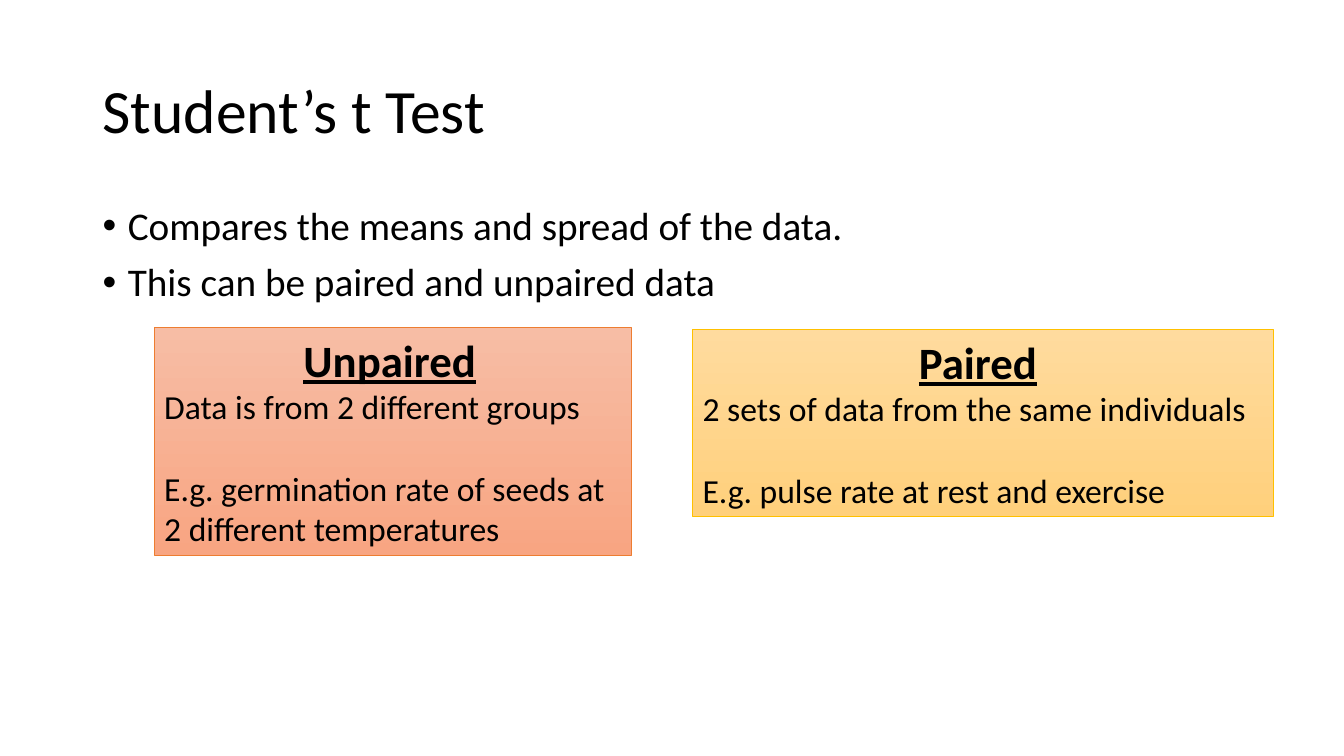
from dataclasses import dataclass

from lxml.etree import SubElement
from pptx import Presentation
from pptx.dml.color import RGBColor as RGB
from pptx.enum.shapes import MSO_SHAPE as Shape
from pptx.enum.text import MSO_ANCHOR as Anchor, PP_ALIGN as Align
from pptx.oxml.ns import qn
from pptx.util import Inches, Pt


@dataclass(frozen=True)
class Theme:
    font: str = "Calibri"
    ink: RGB = RGB(0, 0, 0)
    title: int = 44
    bullet: int = 28
    heading: int = 32
    detail: int = 24
    orange: tuple = ("F7BDA5", "F8A582", "ED7D31")  # top, bottom, outline
    gold: tuple = ("FFDB9E", "FFD07C", "FFC000")


THEME = Theme()


def set_font(font, size, emphasis=False):
    font.name, font.size = THEME.font, Pt(size)
    font.color.rgb = THEME.ink
    font.bold = font.underline = emphasis


def add_text_frame(slide, box, anchor=Anchor.TOP):
    frame = slide.shapes.add_textbox(*map(Inches, box)).text_frame
    frame.word_wrap = True
    frame.vertical_anchor = anchor
    return frame


def add_title(slide, box, title):
    line = add_text_frame(slide, box, Anchor.MIDDLE).paragraphs[0]
    line.text = title
    line.line_spacing = 0.9
    set_font(line.font, THEME.title)


def add_bullets(slide, box, points):
    frame = add_text_frame(slide, box)
    frame.text = "\n".join(points)
    for point in frame.paragraphs:
        point.line_spacing = 0.9
        point.space_before = Pt(10)
        set_font(point.font, THEME.bullet)
        # Hanging bullet
        props = point._p.get_or_add_pPr()
        props.set("marL", str(Inches(0.25)))
        props.set("indent", str(-Inches(0.25)))
        SubElement(props, qn("a:buFont"), typeface="Arial")
        SubElement(props, qn("a:buChar"), char="•")


def add_card(slide, box, colors, heading, space_size, definition, example):
    card = slide.shapes.add_shape(Shape.RECTANGLE, *map(Inches, box))
    card.shadow.inherit = False
    top, bottom, outline = map(RGB.from_string, colors)

    # Vertical gradient and thin outline
    card.fill.gradient()
    card.fill.gradient_angle = 270
    for stop, color in zip(card.fill.gradient_stops, (top, bottom)):
        stop.color.rgb = color
    card.line.color.rgb = outline
    card.line.width = Pt(0.5)

    # Heading, whose trailing space is not underlined
    frame = card.text_frame
    frame.word_wrap = True
    frame.vertical_anchor = Anchor.TOP
    heading_line = frame.paragraphs[0]
    heading_line.alignment = Align.CENTER
    for text, size, emphasis in ((heading, THEME.heading, True), (" ", space_size, False)):
        run = heading_line.add_run()
        run.text = text
        set_font(run.font, size, emphasis)

    # Definition, then the example one line lower
    for text, gap in ((definition, 0), (example, 1.22 * THEME.detail)):
        detail = frame.add_paragraph()
        detail.text = text
        detail.alignment = Align.LEFT
        detail.space_before = Pt(gap)
        set_font(detail.font, THEME.detail)


def main():
    deck = Presentation()
    deck.slide_width, deck.slide_height = Inches(13.33), Inches(7.5)
    slide = deck.slides.add_slide(deck.slide_layouts[6])

    add_title(slide, (0.92, 0.4, 11.5, 1.45), "Student’s t Test")
    add_bullets(slide, (0.92, 2, 11.5, 1.26), (
        "Compares the means and spread of the data.",
        "This can be paired and unpaired data",
    ))
    add_card(slide, (1.53, 3.25, 4.73, 2.26), THEME.orange, "Unpaired", 18,
             "Data is from 2 different groups",
             "E.g. germination rate of seeds at 2 different temperatures")
    add_card(slide, (6.87, 3.27, 5.76, 1.85), THEME.gold, "Paired", THEME.heading,
             "2 sets of data from the same individuals",
             "E.g. pulse rate at rest and exercise")

    deck.save("out.pptx")


if __name__ == "__main__":
    main()
